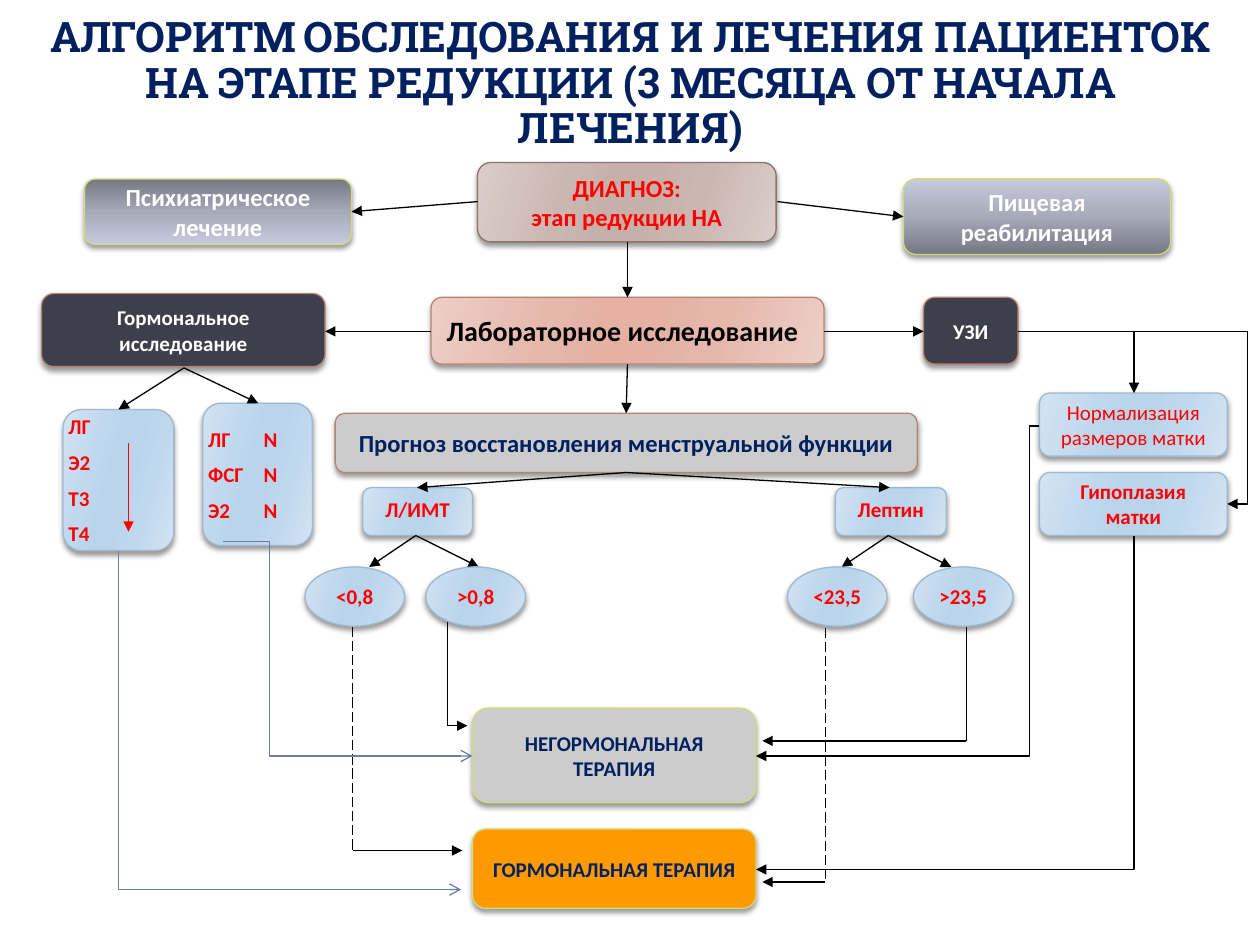
from lxml.etree import SubElement
from pptx import Presentation
from pptx.dml.color import RGBColor
from pptx.enum.dml import MSO_LINE
from pptx.enum.shapes import MSO_CONNECTOR, MSO_SHAPE
from pptx.enum.text import MSO_ANCHOR, MSO_AUTO_SIZE, PP_ALIGN
from pptx.oxml.ns import qn
from pptx.util import Inches, Pt

NAVY = RGBColor(0x00, 0x20, 0x60)
RED = RGBColor(0xFF, 0x00, 0x00)
BLACK = RGBColor(0x00, 0x00, 0x00)
WHITE = RGBColor(0xFF, 0xFF, 0xFF)
GREY = RGBColor(0xCC, 0xCC, 0xCC)
ORANGE = RGBColor(0xFF, 0x99, 0x00)
CHARCOAL = RGBColor(0x3F, 0x3F, 0x4B)
VIOLET = RGBColor(0x72, 0x7C, 0xA3)
LIME = RGBColor(0xD2, 0xDA, 0x7A)
COPPER = RGBColor(0xB8, 0x84, 0x72)
BROWN = RGBColor(0x8E, 0x73, 0x6A)
STEEL = RGBColor(0x9F, 0xB8, 0xCD)


def sheen(edge, middle, centre):
    return 16, list(zip((0, 30, 45, 55, 73, 100),
                        (edge, middle, centre, centre, middle, edge)))


SLATE = [(0, "757882"), (50, "A6AAB9"), (100, "C5CADC")]
TAUPE = sheen("DACDCA", "CBB7B2", "C6B0A9")
ROSE = sheen("ECCEC6", "E6B8AC", "E4B1A3")
BLUE = sheen("D3E3F2", "C0D8EE", "BAD4EC")

STYLES = {
    "diagnosis": (TAUPE, BROWN, RED, 14),
    "care_down": ((90, SLATE), LIME, WHITE, 14),
    "care_up": ((270, SLATE), LIME, WHITE, 14),
    "laboratory": (ROSE, COPPER, BLACK, 16),
    "test": (CHARCOAL, COPPER, WHITE, 12),
    "forecast": (GREY, COPPER, NAVY, 14),
    "finding": (BLUE, STEEL, RED, 12),
    "hormonal": (ORANGE, LIME, NAVY, 12),
    "non_hormonal": (GREY, LIME, NAVY, 12),
}

TITLE = "АЛГОРИТМ ОБСЛЕДОВАНИЯ И ЛЕЧЕНИЯ ПАЦИЕНТОК НА ЭТАПЕ РЕДУКЦИИ (3 МЕСЯЦА ОТ НАЧАЛА ЛЕЧЕНИЯ)"
BOXES = [
    ("ДИАГНОЗ:\nэтап редукции НА", "diagnosis", (3.79, 1.29, 2.37, 0.63), {}),
    ("Психиатрическое лечение", "care_down", (0.67, 1.42, 2.12, 0.52), {}),
    ("Пищевая реабилитация", "care_up", (7.17, 1.42, 2.12, 0.6), {}),
    ("Лабораторное исследование", "laboratory", (3.42, 2.36, 3.12, 0.53), {"left": True}),
    ("УЗИ", "test", (7.33, 2.36, 0.75, 0.53), {}),
    ("Нормализация размеров матки", "finding", (8.25, 3.12, 1.49, 0.5), {"bold": False}),
    ("Гипоплазия матки", "finding", (8.25, 3.75, 1.49, 0.5), {}),
    ("Гормональное исследование", "test", (0.33, 2.33, 2.25, 0.58), {}),
    ("ЛГ\nЭ2\nТ3\nТ4", "finding", (0.5, 3.25, 0.88, 1.12), {"left": True, "listed": True}),
    ("ЛГ\tN\nФСГ\tN\nЭ2\tN", "finding", (1.61, 3.2, 0.87, 1.13), {"left": True, "listed": True}),
    ("Прогноз восстановления менструальной функции", "forecast", (2.66, 3.28, 4.62, 0.47), {}),
    ("Л/ИМТ", "finding", (2.88, 3.87, 0.87, 0.38), {"top": True}),
    ("Лептин", "finding", (6.63, 3.87, 0.88, 0.38), {"top": True}),
    ("ГОРМОНАЛЬНАЯ ТЕРАПИЯ", "hormonal", (3.75, 6.58, 2.25, 0.63), {}),
    ("НЕГОРМОНАЛЬНАЯ ТЕРАПИЯ", "non_hormonal", (3.75, 5.62, 2.25, 0.75), {}),
]
THRESHOLDS = [("<0,8", 2.42), (">0,8", 3.38), ("<23,5", 6.25), (">23,5", 7.25)]

ARROWS = [
    ((6.17, 1.6), (7.17, 1.72)), ((3.79, 1.6), (2.79, 1.68)),
    ((4.98, 1.92), (4.98, 2.36)), ((4.98, 2.89), (4.97, 3.28)),
    ((6.54, 2.63), (7.33, 2.63)), ((3.42, 2.63), (2.58, 2.63)),
    ((1.46, 2.92), (0.94, 3.25)), ((1.46, 2.92), (2.05, 3.2)),
    ((4.97, 3.75), (3.31, 3.87)), ((4.97, 3.75), (7.06, 3.87)),
    ((3.3, 4.25), (2.93, 4.5)), ((3.3, 4.25), (3.8, 4.5)),
    ((7.05, 4.25), (6.68, 4.5)), ((7.05, 4.25), (7.55, 4.5)),
]
DROPS = [
    ((3.55, 4.86), (3.71, 5.76), False), ((7.67, 4.87), (6.05, 5.88), False),
    ((6.55, 4.87), (6.05, 7), True), ((2.8, 4.86), (3.67, 6.75), True),
]
SIDE_ELBOWS = [
    ((8.08, 2.63), (9.74, 4), 9.9, BLACK, "triangle"),
    ((8.25, 3.38), (6, 6), 8.17, BLACK, "triangle"),
    ((1.77, 4.3), (3.75, 6), 2.14, VIOLET, "arrow"),
]
DOWN_ELBOWS = [
    ((9, 4.25), (6, 6.9), BLACK, "triangle"),
    ((0.94, 4.37), (3.66, 7.06), VIOLET, "arrow"),
]

presentation = Presentation()
presentation.slide_width, presentation.slide_height = Inches(10), Inches(7.5)
slide = presentation.slides.add_slide(presentation.slide_layouts[5])


def format_font(paragraph, name, size, color, bold=True):
    for run in paragraph.runs:
        font = run.font
        font.name, font.size, font.bold = name, Pt(size), bold
        font.color.rgb = color


def paint(shape, fill):
    if isinstance(fill, RGBColor):
        shape.fill.solid()
        shape.fill.fore_color.rgb = fill
        return
    angle, stops = fill
    shape.fill.gradient()
    shape.fill.gradient_angle = 360 - angle
    stop_list = shape._element.spPr.find(qn("a:gradFill")).find(qn("a:gsLst"))
    for stop in list(stop_list):
        stop_list.remove(stop)
    for position, color in stops:
        stop = SubElement(stop_list, qn("a:gs"), pos=str(position * 1000))
        SubElement(stop, qn("a:srgbClr"), val=color)


def add_shadow(shape):
    shape.shadow.inherit = False
    effects = shape._element.spPr.find(qn("a:effectLst"))
    shadow = SubElement(effects, qn("a:outerShdw"), blurRad=str(Pt(3)), dist=str(Pt(2)),
                        dir="5400000", rotWithShape="0")
    color = SubElement(shadow, qn("a:srgbClr"), val="000000")
    SubElement(color, qn("a:alpha"), val="40000")


def add_box(text, style, place, kind=MSO_SHAPE.ROUNDED_RECTANGLE, left=False,
            top=False, listed=False, bold=True, tight=False):
    fill, outline, color, size = STYLES[style]
    shape = slide.shapes.add_shape(kind, *map(Inches, place))
    paint(shape, fill)
    shape.line.color.rgb, shape.line.width = outline, Pt(0.75)
    add_shadow(shape)
    frame = shape.text_frame
    frame.word_wrap = True
    frame.vertical_anchor = MSO_ANCHOR.TOP if top else MSO_ANCHOR.MIDDLE
    if listed:
        frame.margin_left, frame.margin_right = 0, Inches(0.08)
    if tight:
        frame.margin_left = frame.margin_right = frame.margin_top = frame.margin_bottom = 0
    frame.text = text
    for paragraph in frame.paragraphs:
        paragraph.alignment = PP_ALIGN.LEFT if left else PP_ALIGN.CENTER
        format_font(paragraph, "Calibri", size, color, bold)
        if listed:
            paragraph.space_before = Pt(6)
            tabs = SubElement(paragraph._p.get_or_add_pPr(), qn("a:tabLst"))
            SubElement(tabs, qn("a:tab"), pos=str(Inches(0.44)), algn="l")


def add_line(start, end, color=BLACK, head="triangle", kind=MSO_CONNECTOR.STRAIGHT):
    connector = slide.shapes.add_connector(kind, *map(Inches, start + end))
    connector.line.color.rgb, connector.line.width = color, Pt(0.75)
    if head:
        SubElement(connector.line._get_or_add_ln(), qn("a:tailEnd"), type=head)
    SubElement(connector._element.spPr, qn("a:effectLst"))
    return connector


def add_side_elbow(start, end, bend, color, head):
    connector = add_line(start, end, color, head, MSO_CONNECTOR.ELBOW)
    share = round((bend - start[0]) / (end[0] - start[0]) * 100000)
    guides = connector._element.spPr.prstGeom.get_or_add_avLst()
    SubElement(guides, qn("a:gd"), name="adj1", fmla=f"val {share}")


def add_down_elbow(start, end, color, head):
    half_x, half_y = (end[0] - start[0]) / 2, (end[1] - start[1]) / 2
    x, y = start[0] + half_x, start[1] + half_y
    connector = add_line((x - half_y, y + half_x), (x + half_y, y - half_x),
                         color, head, MSO_CONNECTOR.ELBOW)
    connector._element.spPr.prstGeom.set("prst", "bentConnector2")
    connector._element.spPr.xfrm.set("rot", "5400000")


title = slide.shapes.title
title.left, title.top, title.width, title.height = map(Inches, (0.17, 0.08, 9.67, 0.91))
title.text_frame.text = TITLE
title.text_frame.word_wrap = True
title.text_frame.auto_size = MSO_AUTO_SIZE.NONE
title.text_frame.vertical_anchor = MSO_ANCHOR.TOP
heading = title.text_frame.paragraphs[0]
heading.alignment, heading.line_spacing = PP_ALIGN.CENTER, 0.9
format_font(heading, "Roboto Slab", 24, NAVY)

for text, style, place, options in BOXES:
    add_box(text, style, place, **options)
for start, end in ARROWS:
    add_line(start, end)
for start, end, dashed in DROPS:
    corner = (start[0], end[1])
    drop = add_line(start, corner, head=None)
    if dashed:
        drop.line.dash_style = MSO_LINE.LONG_DASH
    add_line(corner, end)
for elbow in SIDE_ELBOWS:
    add_side_elbow(*elbow)
for elbow in DOWN_ELBOWS:
    add_down_elbow(*elbow)
branch = add_line((8.08, 2.63), (9, 3.12), kind=MSO_CONNECTOR.ELBOW)
branch._element.spPr.prstGeom.set("prst", "bentConnector2")
add_line((1.02, 3.52), (1.02, 4.22), RED)
for text, x in THRESHOLDS:
    add_box(text, "finding", (x, 4.5, 0.79, 0.47), MSO_SHAPE.OVAL, tight=True)

presentation.save("out.pptx")
